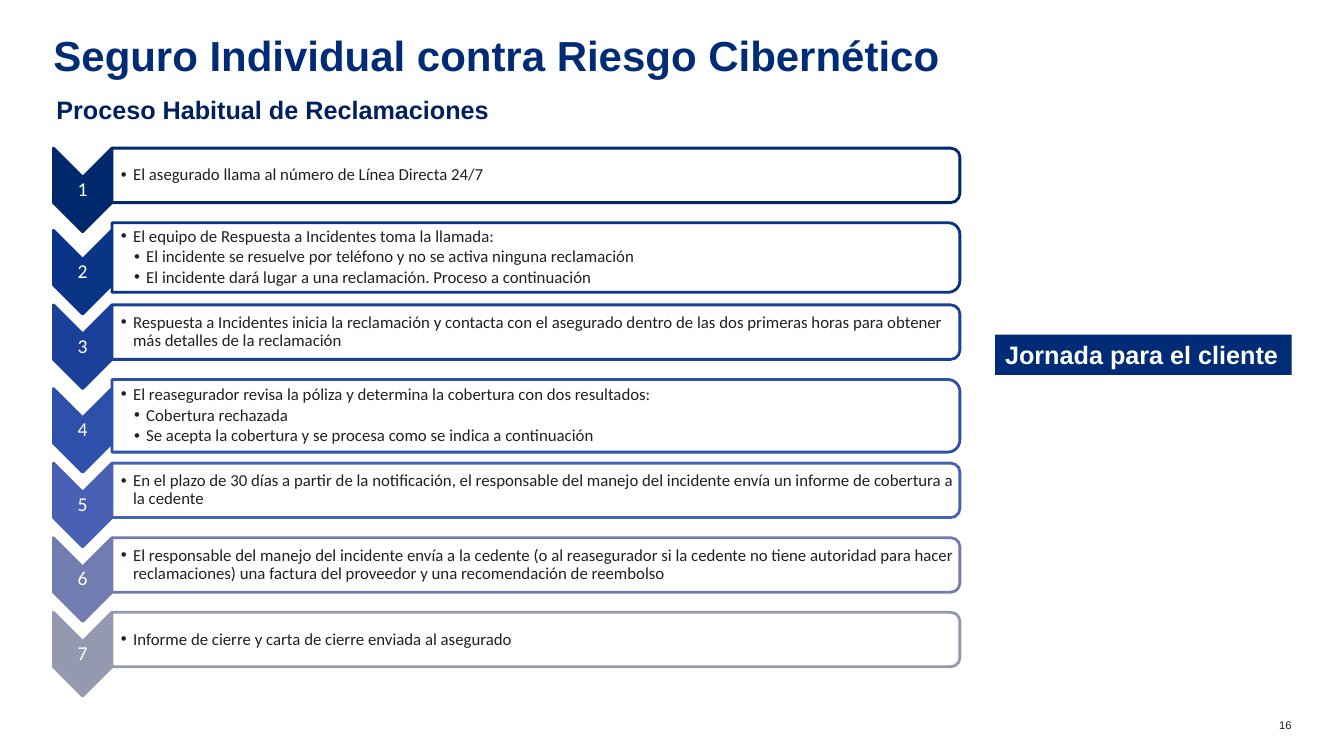
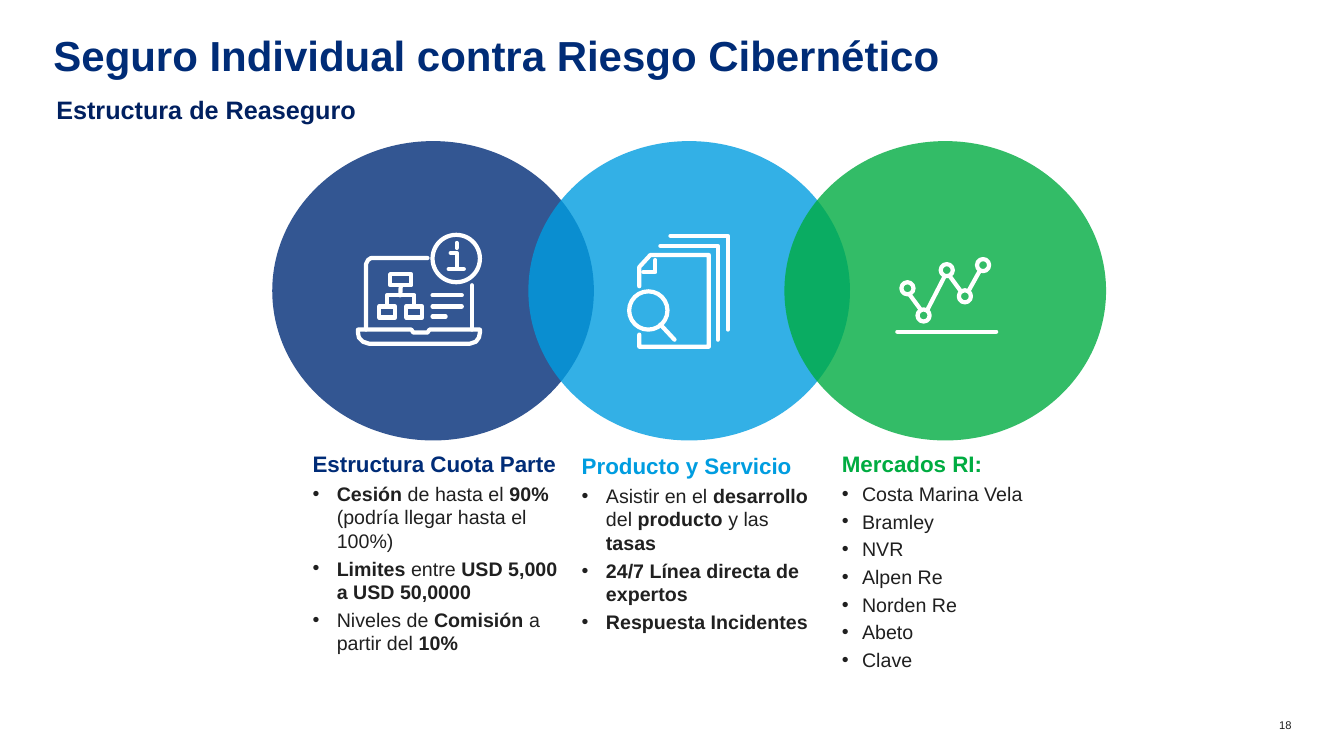
from dataclasses import dataclass

from lxml import etree
from pptx import Presentation
from pptx.dml.color import RGBColor
from pptx.enum.shapes import MSO_CONNECTOR, MSO_SHAPE
from pptx.enum.text import MSO_ANCHOR, MSO_AUTO_SIZE, PP_ALIGN
from pptx.oxml.ns import qn
from pptx.util import Inches, Pt


@dataclass(frozen=True)
class Theme:
    """Colours, fonts and type sizes of the deck."""
    navy: str = "002C77"
    deep: str = "002060"
    sky: str = "009DE0"
    green: str = "00AC41"
    ink: str = "202020"
    white: str = "FFFFFF"
    steps: tuple = ("00286C", "0A3486", "1A409A", "2E4FAA", "4861B4", "717DB0", "9599AF")
    sans: str = "Arial"
    flow: str = "Calibri"
    title: float = 30
    sub: float = 18
    head: float = 16
    body: float = 14
    step: float = 12
    foot: float = 8


def write(para, text, size, color, font=Theme.sans, bold=False, align=None,
          dent=0, hang=0, space=None, before=None, after=None):
    """Fill a paragraph; text between asterisks flips its weight."""
    if hang:
        props = para._p.get_or_add_pPr()
        props.set("marL", str(Inches(dent)))
        props.set("indent", str(-Inches(hang)))
        etree.SubElement(props, qn("a:buFont")).set("typeface", "Arial")
        etree.SubElement(props, qn("a:buChar")).set("char", "•")
    if align is not None:
        para.alignment = align
    if space is not None:
        para.line_spacing = space
    if before is not None:
        para.space_before = Pt(before)
    if after is not None:
        para.space_after = Pt(after)
    for odd, part in enumerate(text.split("*")):
        if part:
            run = para.add_run()
            run.text = part
            run.font.name = font
            run.font.size = Pt(size)
            run.font.bold = bold != bool(odd % 2)
            run.font.color.rgb = RGBColor.from_string(color)


class Deck:
    """Holds the style and the slide being drawn."""

    def __init__(self, theme):
        """Start a wide deck."""
        self.theme = theme
        self.file = Presentation()
        self.file.slide_width = Inches(13.33)
        self.file.slide_height = Inches(7.5)

    def page(self, title, sub, num):
        """Add a slide with its title, subtitle and page number."""
        look = self.theme
        self.slide = self.file.slides.add_slide(self.file.slide_layouts[5])
        self.pad = self.slide.shapes
        head = self.pad.title
        head.left, head.top, head.width, head.height = map(Inches, (0.53, 0.39, 12.27, 0.4))
        write(self.frame(head).paragraphs[0], title, look.title, look.navy,
              bold=True, align=PP_ALIGN.LEFT, space=0.8)
        frame = self.text(0.46, 0.89, 12.28, 0.35, (0.1, 0.05, 0.1, 0.05))
        write(frame.paragraphs[0], sub, look.sub, look.deep, bold=True, after=6)
        frame = self.text(12.5, 7.13, 0.31, 0.13)
        write(frame.paragraphs[0], num, look.foot, look.ink, align=PP_ALIGN.RIGHT)

    def frame(self, shape, inset=(0, 0, 0, 0), anchor=MSO_ANCHOR.TOP, wrap=True):
        """Set up the text frame of a shape."""
        frame = shape.text_frame
        frame.auto_size = MSO_AUTO_SIZE.NONE
        frame.word_wrap = wrap
        frame.vertical_anchor = anchor
        (frame.margin_left, frame.margin_top,
         frame.margin_right, frame.margin_bottom) = map(Inches, inset)
        return frame

    def text(self, x, y, w, h, inset=(0, 0, 0, 0), anchor=MSO_ANCHOR.TOP):
        """Add a text box and return its frame."""
        return self.frame(self.pad.add_textbox(*map(Inches, (x, y, w, h))), inset, anchor)

    def line(self, shape, color, width, blunt=True):
        """Stroke a shape with round joins."""
        shape.line.color.rgb = RGBColor.from_string(color)
        shape.line.width = Pt(width)
        edge = shape.element.spPr.find(qn("a:ln"))
        if blunt:
            edge.set("cap", "rnd")
        etree.SubElement(edge, qn("a:round"))

    def shape(self, kind, x, y, w, h, fill=None, alpha=100, line=None, width=2, turn=0):
        """Add a preset shape, with no fill or line unless given."""
        item = self.pad.add_shape(kind, *map(Inches, (x, y, w, h)))
        item.shadow.inherit = False
        item.rotation = turn
        if fill:
            item.fill.solid()
            item.fill.fore_color.rgb = RGBColor.from_string(fill)
            if alpha < 100:
                tint = item.element.spPr.find(qn("a:solidFill"))[0]
                etree.SubElement(tint, qn("a:alpha")).set("val", str(alpha * 1000))
        else:
            item.fill.background()
        if line:
            self.line(item, line, width, blunt=False)
        else:
            item.line.fill.background()
        return item

    def upright(self, kind, x, y, w, h, **style):
        """Add a shape turned a quarter whose visible frame is given."""
        return self.shape(kind, x + (w - h) / 2, y + (h - w) / 2, h, w, turn=90, **style)

    def wire(self, start, end):
        """Add a white icon line."""
        item = self.pad.add_connector(MSO_CONNECTOR.STRAIGHT, *map(Inches, (*start, *end)))
        self.line(item, self.theme.white, 3)
        etree.SubElement(item.element.spPr, qn("a:effectLst"))
        return item

    def trace(self, *dots):
        """Add a white icon outline through the dots."""
        dots = [tuple(map(Inches, dot)) for dot in dots]
        pen = self.pad.build_freeform(*dots[0])
        pen.add_line_segments(dots[1:], close=dots[0] == dots[-1])
        item = pen.convert_to_shape()
        item.shadow.inherit = False
        item.fill.background()
        self.line(item, self.theme.white, 3)

    def icon(self, lines=(), paths=(), rings=(), boxes=()):
        """Draw a grouped icon and return its boxes; the group stays open."""
        self.pad = self.slide.shapes.add_group_shape().shapes
        style = {"line": self.theme.white, "width": 3}
        for start, end in lines:
            self.wire(start, end)
        for dots in paths:
            self.trace(*dots)
        for x, y, d in rings:
            self.shape(MSO_SHAPE.OVAL, x, y, d, d, **style)
        return [self.shape(MSO_SHAPE.RECTANGLE, *box, **style) for box in boxes]

    def step(self, num, top, high, color, items):
        """Add a numbered chevron with its box of bullets."""
        look = self.theme
        mid = top + high / 2
        self.upright(MSO_SHAPE.CHEVRON, 0.53, mid - 0.27, 0.58, 0.83, fill=color, line=color)
        frame = self.text(0.53, mid + 0.02, 0.58, 0.25, (0.01,) * 4, MSO_ANCHOR.MIDDLE)
        write(frame.paragraphs[0], str(num), look.body, look.white, look.flow,
              align=PP_ALIGN.CENTER, space=0.9)
        self.upright(MSO_SHAPE.ROUND_2_SAME_RECTANGLE, 1.11, top, 8.41, high,
                     fill=look.white, alpha=90, line=color)
        frame = self.text(1.11, top + 0.03, 8.38, high - 0.06,
                          (0.09, 0.01, 0.01, 0.01), MSO_ANCHOR.MIDDLE)
        for spot, item in enumerate(items):
            para = frame.add_paragraph() if spot else frame.paragraphs[0]
            para.level = 2 if spot else 1
            write(para, item, look.step, look.ink, look.flow, dent=0.25 if spot else 0.12,
                  hang=0.12, space=0.9, after=1.8)

    def column(self, x, y, w, h, head, color, hang, items):
        """Add a coloured heading over bullets."""
        look = self.theme
        frame = self.text(x, y, w, h)
        write(frame.paragraphs[0], head, look.head, color, bold=True)
        for item in items:
            write(frame.add_paragraph(), item, look.body, look.ink,
                  dent=hang, hang=hang, before=3)


TITLE = "Seguro Individual contra Riesgo Cibernético"
STEPS = (
    (0.54, ["El asegurado llama al número de Línea Directa 24/7"]),
    (0.69, ["El equipo de Respuesta a Incidentes toma la llamada:",
            "El incidente se resuelve por teléfono y no se activa ninguna reclamación",
            "El incidente dará lugar a una reclamación. Proceso a continuación"]),
    (0.54, ["Respuesta a Incidentes inicia la reclamación y contacta con el asegurado dentro "
            "de las dos primeras horas para obtener más detalles de la reclamación"]),
    (0.72, ["El reasegurador revisa la póliza y determina la cobertura con dos resultados:",
            "Cobertura rechazada",
            "Se acepta la cobertura y se procesa como se indica a continuación"]),
    (0.54, ["En el plazo de 30 días a partir de la notificación, el responsable del manejo "
            "del incidente envía un informe de cobertura a la cedente"]),
    (0.54, ["El responsable del manejo del incidente envía a la cedente (o al reasegurador "
            "si la cedente no tiene autoridad para hacer reclamaciones) una factura del "
            "proveedor y una recomendación de reembolso"]),
    (0.54, ["Informe de cierre y carta de cierre enviada al asegurado"]),
)


def claims(deck):
    """Draw the claims process."""
    look = deck.theme
    deck.page(TITLE, "Proceso Habitual de Reclamaciones", "16")
    top = 1.47
    for num, (color, (high, items)) in enumerate(zip(look.steps, STEPS), 1):
        deck.step(num, top, high, color, items)
        top += 0.47 + high / 2
    label = deck.shape(MSO_SHAPE.RECTANGLE, 9.87, 3.32, 2.94, 0.4, fill=look.navy)
    frame = deck.frame(label, (0.1, 0.05, 0.1, 0.05), wrap=False)
    write(frame.paragraphs[0], "Jornada para el cliente", look.sub, look.white,
          bold=True, align=PP_ALIGN.LEFT)


def cover(deck):
    """Draw the reinsurance structure."""
    look = deck.theme
    deck.page(TITLE, "Estructura de Reaseguro", "18")
    for spot, color in enumerate((look.navy, look.sky, look.green)):
        deck.shape(MSO_SHAPE.OVAL, 2.7 + 2.54 * spot, 1.4, 3.19, 2.97, fill=color, alpha=80)
    deck.column(3.1, 4.47, 2.51, 2.1, "Estructura Cuota Parte", look.navy, 0.24, [
        "*Cesión* de hasta el *90%* (podría llegar hasta el 100%)",
        "*Limites* entre *USD 5,000 a USD 50,0000*",
        "Niveles de *Comisión* a partir del *10%*"])
    deck.column(5.77, 4.49, 2.33, 2.02, "Producto y Servicio", look.sky, 0.24, [
        "Asistir en el *desarrollo* del *producto* y las *tasas*",
        "*24/7 Línea directa de expertos*", "*Respuesta Incidentes*"])
    deck.column(8.35, 4.47, 2.81, 2.55, "Mercados RI:", look.green, 0.2, [
        "Costa Marina Vela", "Bramley", "NVR", "Alpen Re", "Norden Re", "Abeto", "Clave"])
    root, *_ = deck.icon(
        lines=[((4.68, 2.83), (4.68, 3.27)), ((4.45, 2.67), (4.53, 2.67)),
               ((4.53, 2.46), (4.53, 2.41)), ((4.29, 2.93), (4.58, 2.93)),
               ((4.29, 3.04), (4.58, 3.04)), ((4.29, 3.14), (4.42, 3.14))],
        paths=[[(3.55, 3.27), (4.08, 3.27), (4.1, 3.3), (4.24, 3.3), (4.26, 3.27),
                (4.76, 3.27), (4.76, 3.3), (4.75, 3.35), (4.72, 3.39), (4.66, 3.41),
                (3.66, 3.41), (3.6, 3.39), (3.56, 3.35), (3.55, 3.3), (3.55, 3.27)],
               [(3.63, 3.27), (3.63, 2.62), (3.65, 2.58), (3.68, 2.56), (4.24, 2.56)],
               [(4.6, 2.67), (4.53, 2.67), (4.53, 2.51), (4.47, 2.51)],
               [(4.11, 3.04), (4.11, 2.93), (3.84, 2.93), (3.84, 3.04)]],
        rings=[(4.29, 2.33, 0.47)],
        boxes=[(3.87, 2.72, 0.21, 0.11), (3.76, 3.04, 0.16, 0.11), (4.03, 3.04, 0.16, 0.11)])
    deck.wire((3.97, 2.83), (3.97, 2.93)).begin_connect(root, 2)
    deck.icon(
        lines=[((6.55, 3.22), (6.69, 3.37))],
        paths=[[(6.55, 2.44), (7.12, 2.44), (7.12, 3.37)],
               [(6.65, 2.34), (7.22, 2.34), (7.22, 3.27)],
               [(6.38, 2.7), (6.5, 2.7), (6.5, 2.58)],
               [(6.34, 2.84), (6.34, 2.65), (6.45, 2.53), (7.03, 2.53),
                (7.03, 3.44), (6.34, 3.44), (6.34, 3.32)]],
        rings=[(6.24, 2.89, 0.38)])
    deck.icon(
        lines=[((9.61, 2.88), (9.71, 2.7)), ((9.42, 2.74), (9.53, 2.89)),
               ((9.2, 3.07), (9.37, 2.74)), ((9.02, 2.92), (9.13, 3.07)),
               ((9.88, 3.29), (8.9, 3.29))],
        rings=[(x, y, 0.12) for x, y in (
            (8.94, 2.8), (9.1, 3.07), (9.33, 2.62), (9.51, 2.88), (9.69, 2.57))])


def main():
    """Build and save the deck."""
    deck = Deck(Theme())
    claims(deck)
    cover(deck)
    deck.file.save("out.pptx")


if __name__ == "__main__":
    main()
